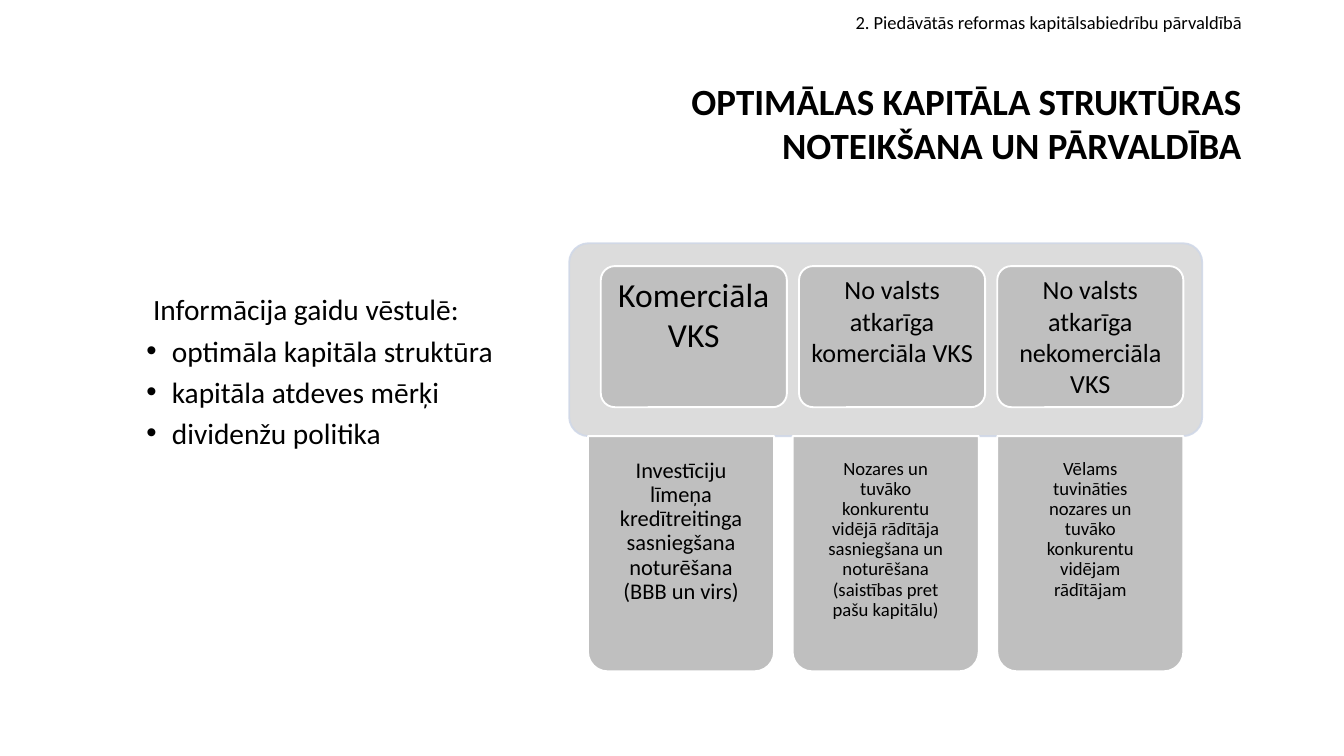
from lxml.etree import SubElement
from pptx import Presentation
from pptx.dml.color import RGBColor
from pptx.enum.shapes import MSO_SHAPE
from pptx.enum.text import MSO_ANCHOR, MSO_AUTO_SIZE, PP_ALIGN
from pptx.oxml.ns import qn
from pptx.util import Inches, Pt

COLORS = {"ink": "000000", "panel": "D9D9D9", "edge": "D0D8E8",
          "card": "BFBFBF", "white": "FFFFFF"}
CARDS = [
    ("Komerciāla VKS", 36,
     "Investīciju līmeņa kredītreitinga sasniegšana noturēšana (BBB un virs)", 24),
    ("No valsts atkarīga komerciāla VKS", 28,
     "Nozares un tuvāko konkurentu vidējā rādītāja sasniegšana un noturēšana "
     "(saistības pret pašu kapitālu)", 20),
    ("No valsts atkarīga nekomerciāla VKS", 28,
     "Vēlams tuvināties nozares un tuvāko konkurentu vidējam rādītājam", 20),
]
GOALS = ["optimāla kapitāla struktūra", "kapitāla atdeves mērķi", "dividenžu politika"]


def color(name):
    """Return the named colour."""
    return RGBColor.from_string(COLORS[name])


def write(frame, text, size, bold=False, align=PP_ALIGN.LEFT, before=0, after=0,
          lines=1.0, first=False):
    """Write one formatted paragraph and return it."""
    para = frame.paragraphs[0] if first else frame.add_paragraph()
    para.alignment, para.line_spacing = align, lines
    para.space_before, para.space_after = Pt(before), Pt(after)
    run = para.add_run()
    run.text = text
    font = run.font
    font.name, font.size, font.bold = "Calibri", Pt(size), bold
    font.color.rgb = color("ink")
    return para


def indent(para, left, hang=0, mark=None):
    """Indent a paragraph and give it a bullet if one is named."""
    props = para._p.get_or_add_pPr()
    props.set("marL", str(Inches(left)))
    props.set("indent", str(Inches(-hang)))
    if mark:
        SubElement(props, qn("a:buFont")).set("typeface", "Arial")
        SubElement(props, qn("a:buChar")).set("char", mark)


def block(slide, kind, box, fill, edge, rounds, alpha=None):
    """Draw a filled shape with rounded corners."""
    shape = slide.shapes.add_shape(kind, *map(Inches, box))
    shape.shadow.inherit = False
    for spot, value in enumerate(rounds):
        shape.adjustments[spot] = value
    shape.fill.solid()
    shape.fill.fore_color.rgb = color(fill)
    shape.line.color.rgb = color(edge)
    shape.line.width = Pt(2)
    if alpha:
        for tint in shape._element.spPr.iter(qn("a:srgbClr")):
            SubElement(tint, qn("a:alpha")).set("val", str(alpha * 1000))
    shape.text_frame.word_wrap = True
    shape.text_frame.vertical_anchor = MSO_ANCHOR.TOP
    return shape


def header(slide, box):
    """Place the section name and the heading in the title."""
    title = slide.shapes.title
    title.left, title.top, title.width, title.height = map(Inches, box)
    frame = title.text_frame
    frame.auto_size, frame.word_wrap = MSO_AUTO_SIZE.NONE, True
    frame.vertical_anchor = MSO_ANCHOR.MIDDLE
    right = PP_ALIGN.RIGHT
    write(frame, "2. Piedāvātās reformas kapitālsabiedrību pārvaldībā", 19.8,
          align=right, first=True)
    write(frame, "OPTIMĀLAS KAPITĀLA STRUKTŪRAS", 39.6, bold=True, align=right, before=48)
    write(frame, "NOTEIKŠANA UN PĀRVALDĪBA", 39.6, bold=True, align=right)


def goals(slide, box):
    """List what the letter of expectations holds."""
    frame = slide.shapes.add_textbox(*map(Inches, box)).text_frame
    frame.word_wrap = True
    lead = write(frame, "Informācija gaidu vēstulē:", 31.5, after=6.3, first=True)
    indent(lead, 0.1)
    for goal in GOALS:
        indent(write(frame, goal, 31.5, after=6.3), 0.38, 0.38, "•")


def groups(slide, box):
    """Draw the panel with a head card and a hanging card for each group."""
    left, top, width, height = box
    block(slide, MSO_SHAPE.ROUNDED_RECTANGLE, box, "panel", "edge", [0.1], alpha=90)
    for col, (head, big, note, small) in enumerate(CARDS):
        place = (left + 0.47 + col * 2.95, top + 0.34, 2.77, 2.1)
        card = block(slide, MSO_SHAPE.ROUNDED_RECTANGLE, place, "card", "white", [0.1])
        write(card.text_frame, head, big, align=PP_ALIGN.CENTER, first=True)
        place = (left + 0.28 + col * 3.045, top + height, 2.77, 3.5)
        card = block(slide, MSO_SHAPE.ROUND_2_SAME_RECTANGLE, place, "card", "white",
                     [0, 0.105])
        frame = card.text_frame
        frame.margin_left = frame.margin_right = Inches(0.34)
        frame.margin_top = frame.margin_bottom = Inches(0.34)
        write(frame, note, small, align=PP_ALIGN.CENTER, lines=0.9, first=True)


def main():
    """Build and save the slide."""
    deck = Presentation()
    deck.slide_width, deck.slide_height = Inches(20), Inches(11.25)
    slide = deck.slides.add_slide(deck.slide_layouts[5])
    header(slide, (0, 0.29, 18.58, 2.07))
    goals(slide, (2.08, 4.29, 6.2, 2.6))
    groups(slide, (8.47, 3.62, 9.42, 2.87))
    deck.save("out.pptx")


if __name__ == "__main__":
    main()
